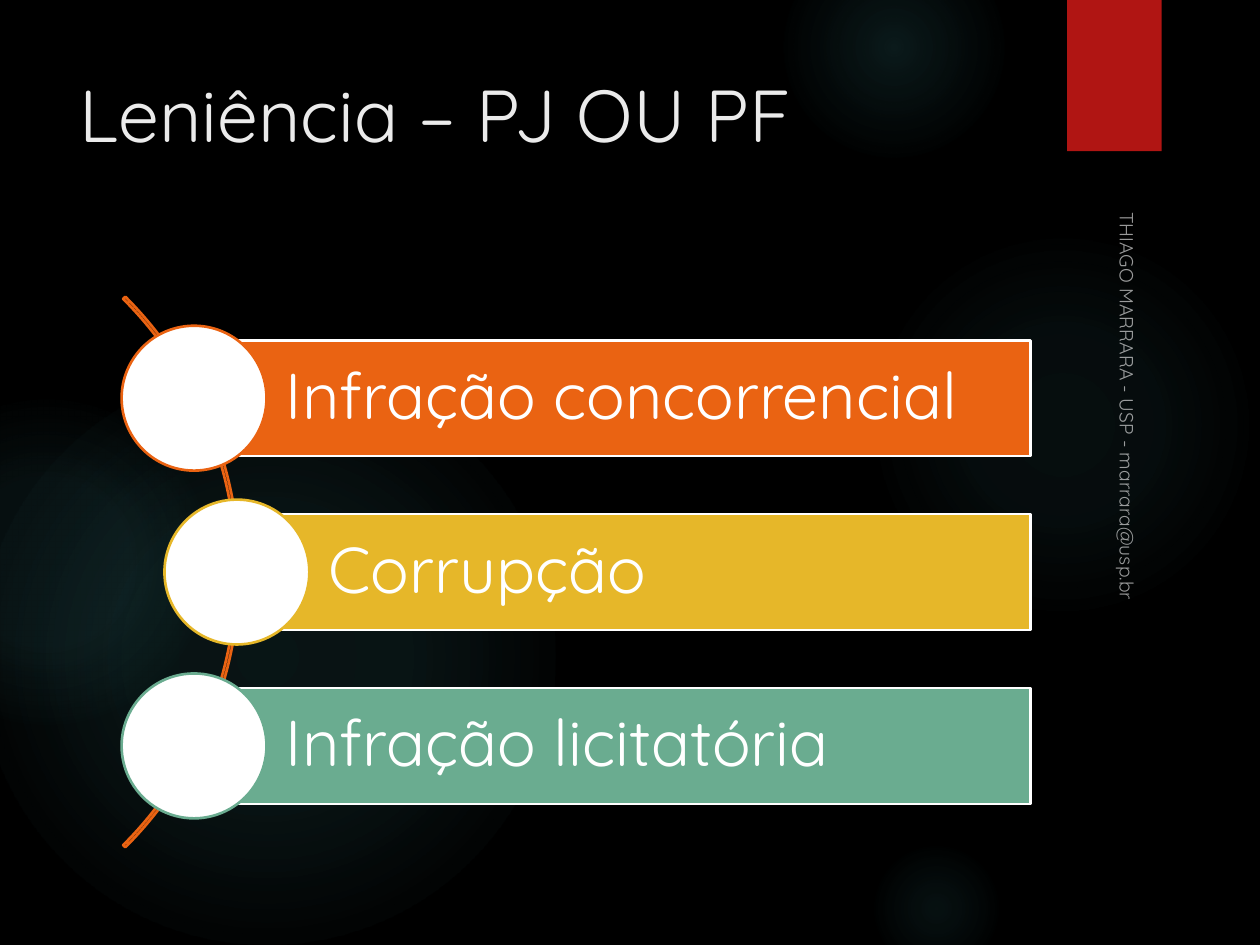
from lxml.etree import SubElement
from pptx import Presentation
from pptx.dml.color import RGBColor
from pptx.enum.shapes import MSO_SHAPE as Shape
from pptx.enum.text import MSO_ANCHOR as Anchor, PP_ALIGN as Align
from pptx.oxml import parse_xml
from pptx.oxml.ns import nsdecls, qn
from pptx.util import Inches, Pt

FONT = "Quicksand"
WHITE, ACCENT, GLOW = "FFFFFF", "EA6312", "50B9C1"
TITLE = "Leniência – PJ OU PF"
FOOTER = "THIAGO MARRARA - USP - marrara@usp.br"
ITEMS = [
    ("Infração concorrencial", ACCENT, 1.54),
    ("Corrupção", "E6B729", 1.88),
    ("Infração licitatória", "6AAC90", 1.54),
]
GLOWS = [
    (6.89, 1.83, 3.08, [(0, 7), (36, 6), (69, 0)]),
    (6.22, -0.5, 1.75, [(0, 14), (36, 7), (73, 0)]),
    (6.89, 6.67, 1.08, [(0, 9), (36, 5), (66, 0)]),
    (-0.17, 2.92, 4.58, [(0, 11), (36, 10), (75, 0)]),
    (-0.92, 3.17, 2.58, [(0, 8), (36, 8), (72, 0)]),
]
MIDDLE, PITCH = 4.54, 1.38
BAR_RIGHT, BAR_HEIGHT, CIRCLE = 8.18, 0.92, 1.15
ARC_LEFT, ARC_SIZE = -4.28, 6.18


def color(hex_string):
    return RGBColor.from_string(hex_string)


def add_shape(slide, kind, box, fill=None, line=None):
    shape = slide.shapes.add_shape(kind, *map(Inches, box))
    shape.shadow.inherit = False
    if fill:
        shape.fill.solid()
        shape.fill.fore_color.rgb = color(fill)
    else:
        shape.fill.background()
    if line:
        shape.line.color.rgb = color(line)
        shape.line.width = Pt(1.5)
    else:
        shape.line.fill.background()
    return shape


def write(shape, text, size, text_color, anchor):
    frame = shape.text_frame
    frame.text = text
    frame.word_wrap = True
    frame.vertical_anchor = anchor
    paragraph = frame.paragraphs[0]
    paragraph.alignment = Align.LEFT
    paragraph.font.name = FONT
    paragraph.font.size = Pt(size)
    paragraph.font.color.rgb = color(text_color)
    return paragraph


def add_glow(slide, left, top, size, stops):
    shape = add_shape(slide, Shape.OVAL, (left, top, size, size))
    stops_xml = "".join(
        f'<a:gs pos="{position * 1000}"><a:srgbClr val="{GLOW}">'
        f'<a:alpha val="{alpha * 1000}"/></a:srgbClr></a:gs>'
        for position, alpha in stops
    )
    gradient = parse_xml(
        f'<a:gradFill {nsdecls("a")}><a:gsLst>{stops_xml}</a:gsLst><a:path path="circle">'
        '<a:fillToRect l="50000" t="50000" r="50000" b="50000"/></a:path></a:gradFill>'
    )
    properties = shape._element.spPr
    properties.replace(properties.find(qn("a:noFill")), gradient)


def add_title(slide):
    title = slide.shapes.title
    slide.shapes._spTree.append(title._element)
    title.left, title.top, title.width, title.height = map(Inches, (0.53, 0.5, 7.72, 1.53))
    write(title, TITLE, 42, "EBEBEB", Anchor.TOP)


def add_arc(slide):
    box = (ARC_LEFT, MIDDLE - ARC_SIZE / 2, ARC_SIZE, ARC_SIZE)
    arc = add_shape(slide, Shape.BLOCK_ARC, box, line=ACCENT)
    for index, value in enumerate((189, 27, 0.004)):
        arc.adjustments[index] = value


def add_item(slide, row, text, fill, left):
    center = MIDDLE + (row - 1) * PITCH
    box = (left, center - BAR_HEIGHT / 2, BAR_RIGHT - left, BAR_HEIGHT)
    bar = add_shape(slide, Shape.RECTANGLE, box, fill, WHITE)
    write(bar, text, 37, WHITE, Anchor.MIDDLE).line_spacing = 0.9
    bar.text_frame.margin_left = Inches(0.73)
    bar.text_frame.margin_top = bar.text_frame.margin_bottom = Inches(0.1)
    circle_box = (left - CIRCLE / 2, center - CIRCLE / 2, CIRCLE, CIRCLE)
    add_shape(slide, Shape.OVAL, circle_box, WHITE, fill)


def add_footer(slide):
    footer = slide.shapes.add_textbox(*map(Inches, (6.82, 3.57, 4.22, 0.25)))
    footer.rotation = 90
    paragraph = write(footer, FOOTER, 11, WHITE, Anchor.BOTTOM)
    for tint in paragraph._p.iter(qn("a:srgbClr")):
        SubElement(tint, qn("a:alpha"), val="60000")


def main():
    """Build the slide on leniency and its three kinds of infraction."""
    presentation = Presentation()
    presentation.slide_width, presentation.slide_height = Inches(10), Inches(7.5)
    slide = presentation.slides.add_slide(presentation.slide_layouts[5])
    slide.background.fill.solid()
    slide.background.fill.fore_color.rgb = color("000000")
    for glow in GLOWS:
        add_glow(slide, *glow)
    add_shape(slide, Shape.RECTANGLE, (8.47, 0, 0.75, 1.2), "B01513")
    add_title(slide)
    add_arc(slide)
    for row, item in enumerate(ITEMS):
        add_item(slide, row, *item)
    add_footer(slide)
    presentation.save("out.pptx")


if __name__ == "__main__":
    main()
